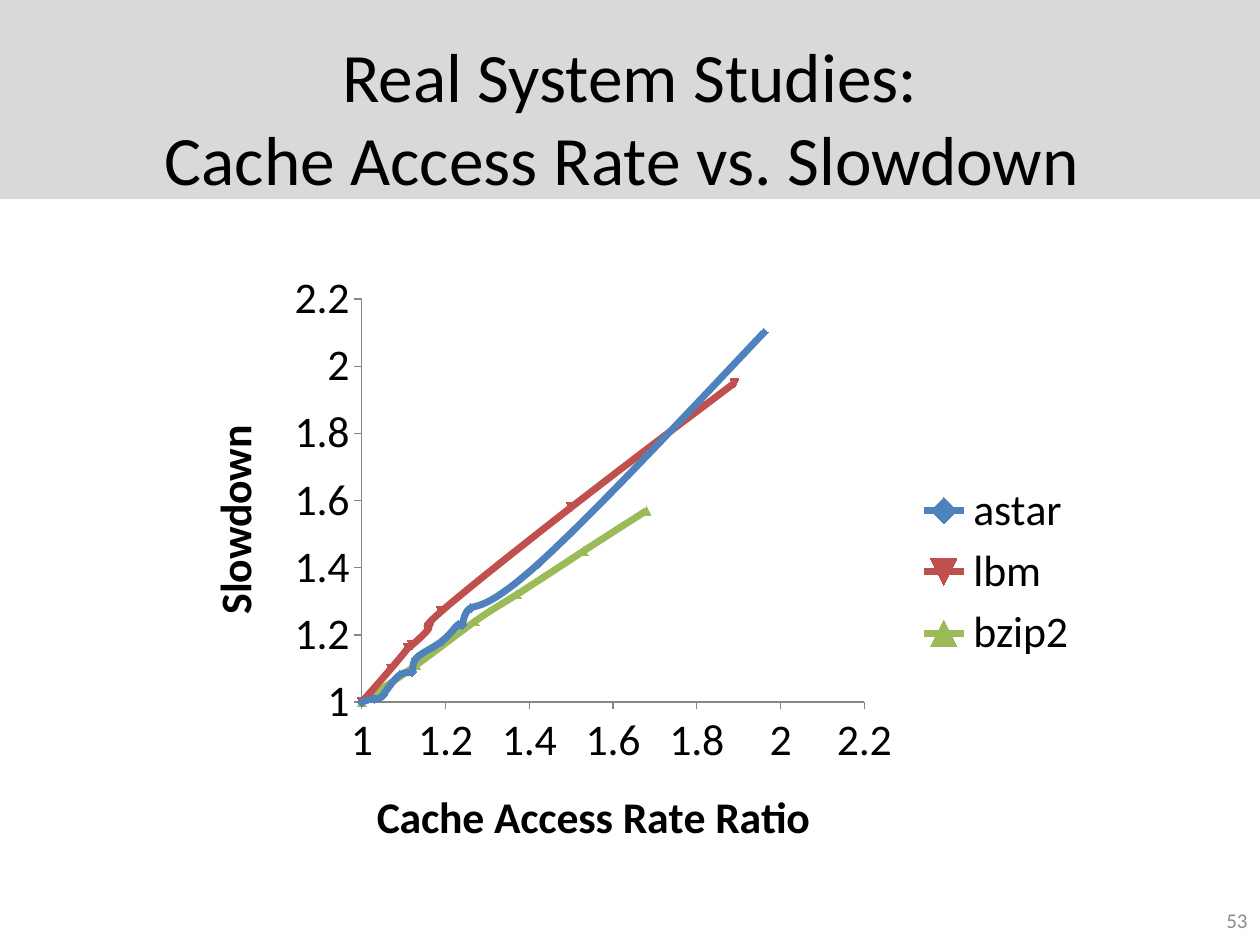
import pptx
import pptx.util
import pptx.chart.data
import pptx.dml.color
import pptx.enum.chart
import pptx.enum.shapes
import pptx.enum.text
import lxml.etree

Cm = pptx.util.Cm
Pt = pptx.util.Pt
enum = pptx.enum

# Content
HEAD = "Real System Studies:\vCache Access Rate vs. Slowdown "
PAGE = "53"
AXES = {"x": "Cache Access Rate Ratio", "y": "Slowdown"}
RUNS = {
    "astar": [(1.96, 2.1), (1.42, 1.41), (1.26, 1.28), (1.24, 1.23),
              (1.23, 1.23), (1.19, 1.18), (1.13, 1.13), (1.12, 1.09),
              (1.09, 1.08), (1.05, 1.02), (1.03, 1.01), (1, 1)],
    "lbm": [(1.89, 1.95), (1.5, 1.58), (1.19, 1.27), (1.16, 1.22),
            (1.12, 1.17), (1.11, 1.16), (1.07, 1.1), (1, 1)],
    "bzip2": [(1.68, 1.57), (1.53, 1.45), (1.37, 1.32), (1.27, 1.24),
              (1.13, 1.11), (1, 1)],
}
MARKS = {"astar": "DIAMOND", "lbm": "AUTOMATIC", "bzip2": "TRIANGLE"}

# Look
FONT = "Calibri"
COLORS = {"band": "D9D9D9", "text": "000000", "page": "8C8C8C",
          "axis": "868686", "astar": "4F81BD", "lbm": "C0504D",
          "bzip2": "9BBB59"}
SCALE = {"minimum_scale": 1, "maximum_scale": 2.2, "major_unit": 0.2,
         "has_major_gridlines": False, "has_minor_gridlines": False,
         "has_title": True,
         "major_tick_mark": enum.chart.XL_TICK_MARK.OUTSIDE,
         "minor_tick_mark": enum.chart.XL_TICK_MARK.NONE}
PLOT = {"x": 0.2, "y": 0.06, "w": 0.55, "h": 0.65}


def rgb(name):
    return pptx.dml.color.RGBColor.from_string(COLORS[name])


def style(font, size, color="text", bold=False):
    form = {"name": FONT, "size": Pt(size), "bold": bold}
    for key, val in form.items():
        setattr(font, key, val)
    font.color.rgb = rgb(color)


def write(shape, text, size, color, align):
    frame = shape.text_frame
    form = {"text": text, "word_wrap": True,
            "auto_size": enum.text.MSO_AUTO_SIZE.NONE,
            "vertical_anchor": enum.text.MSO_ANCHOR.MIDDLE}
    for key, val in form.items():
        setattr(frame, key, val)
    par = frame.paragraphs[0]
    par.alignment = align
    for run in par.runs:
        style(run.font, size, color)


deck = pptx.Presentation()
deck.slide_width, deck.slide_height = Cm(25.4), Cm(19.05)
slide = deck.slides.add_slide(deck.slide_layouts[5])
shapes = slide.shapes

# Title on its band
title = shapes.title
place = {"left": 1.27, "top": 0.76, "width": 22.86, "height": 3.18}
for key, val in place.items():
    setattr(title, key, Cm(val))
write(title, HEAD, 39.6, "text", enum.text.PP_ALIGN.CENTER)
band = shapes.add_shape(enum.shapes.MSO_SHAPE.RECTANGLE,
                        0, 0, deck.slide_width, Cm(4.01))
band.shadow.inherit = False
band.fill.solid()
band.fill.fore_color.rgb = rgb("band")
band.line.fill.background()
title.element.addprevious(band.element)

# Page number
page = shapes.add_textbox(Cm(19.48), Cm(18.03), Cm(5.92), Cm(1.02))
write(page, PAGE, 12, "page", enum.text.PP_ALIGN.RIGHT)

# Chart
data = pptx.chart.data.XyChartData()
for name, points in RUNS.items():
    line = data.add_series(name)
    for x, y in points:
        line.add_data_point(x, y)
chart = shapes.add_chart(enum.chart.XL_CHART_TYPE.XY_SCATTER_SMOOTH,
                         Cm(3.61), Cm(5.28), Cm(18.42), Cm(12.5),
                         data).chart
style(chart.font, 25)
chart.has_title = False
chart.has_legend = True
chart.legend.position = enum.chart.XL_LEGEND_POSITION.RIGHT
chart.legend.include_in_layout = False
chart.plots[0].vary_by_categories = False

for axis, label in ((chart.category_axis, AXES["x"]),
                    (chart.value_axis, AXES["y"])):
    for key, val in SCALE.items():
        setattr(axis, key, val)
    axis.tick_labels.number_format = "General"
    axis.tick_labels.number_format_is_linked = False
    axis.format.line.color.rgb = rgb("axis")
    axis.format.line.width = Pt(0.75)
    frame = axis.axis_title.text_frame
    frame.text = label
    style(frame.paragraphs[0].runs[0].font, 25, bold=True)

for line in chart.plots[0].series:
    color = rgb(line.name)
    line.format.line.color.rgb = color
    line.format.line.width = Pt(4)
    mark = line.marker
    mark.style = getattr(enum.chart.XL_MARKER_STYLE, MARKS[line.name])
    mark.format.fill.solid()
    mark.format.fill.fore_color.rgb = color
    mark.format.line.color.rgb = color
    for tag in line._element.findall("{*}smooth"):
        tag.set("val", "1")

# Fixed inner plot area
area = chart.plots[0]._element.getparent()
space = lxml.etree.QName(area).namespace
for old in area.findall("{*}layout"):
    area.remove(old)
lay = lxml.etree.Element(f"{{{space}}}layout")
area.insert(0, lay)
man = lxml.etree.SubElement(lay, f"{{{space}}}manualLayout")
rules = {"layoutTarget": "inner", "xMode": "edge", "yMode": "edge", **PLOT}
for key, val in rules.items():
    lxml.etree.SubElement(man, f"{{{space}}}{key}").set("val", str(val))

deck.save("out.pptx")
